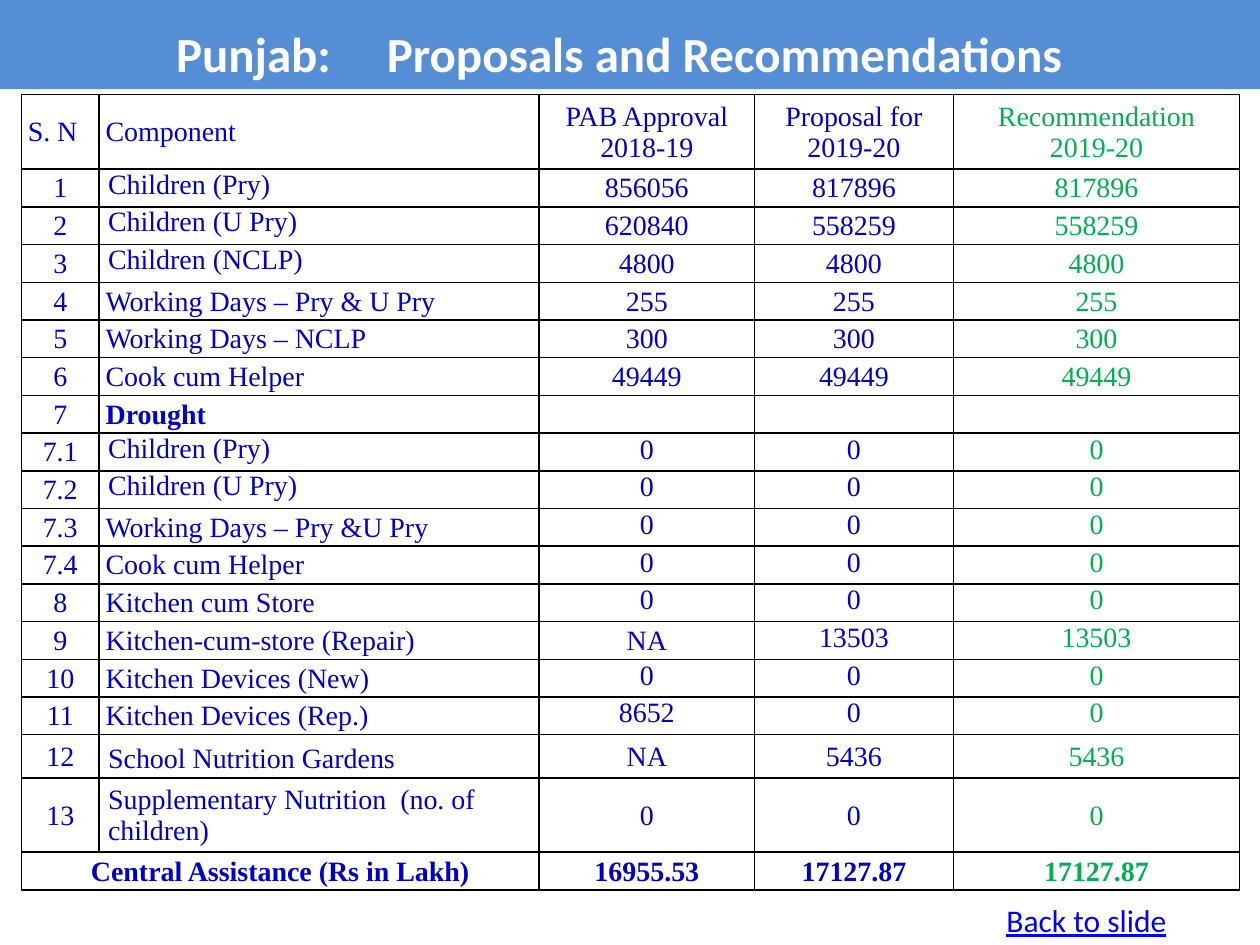
"""Build the Punjab proposals and recommendations slide."""
from dataclasses import dataclass

from lxml import etree
from pptx import Presentation
from pptx.dml.color import RGBColor
from pptx.enum.shapes import MSO_SHAPE
from pptx.enum.text import MSO_ANCHOR, PP_ALIGN
from pptx.oxml.ns import qn
from pptx.util import Cm, Pt

RECT = MSO_SHAPE.RECTANGLE
TOP, MIDDLE = MSO_ANCHOR.TOP, MSO_ANCHOR.MIDDLE
LEFT, CENTER = PP_ALIGN.LEFT, PP_ALIGN.CENTER

BLUE, GREEN, WHITE, BLACK = "0000CC", "00B050", "FFFFFF", "000000"
BANNER, LINK = "558ED5", "0000FF"
SERIF, SANS = "Times New Roman", "Calibri"
BODY_SIZE = 16
NARROW, WIDE = 0.13, 0.18
COLUMN_WIDTHS = (1.57, 8.87, 4.34, 4.01, 5.77)
ROW_HEIGHT, HEADER_HEIGHT = 0.76, 1.5


@dataclass(frozen=True)
class Style:
    align: PP_ALIGN = CENTER
    anchor: MSO_ANCHOR = MIDDLE
    inset: float = WIDE
    color: str = BLUE
    bold: bool = False
    spacing: float = 1.0
    top_inset: float = 0.02


@dataclass(frozen=True)
class Row:
    number: str
    component: str
    values: tuple[str, str, str]
    label: Style
    value_anchor: MSO_ANCHOR = MIDDLE
    height: float = ROW_HEIGHT


PLAIN = Style(LEFT, inset=NARROW)
HEADING = Style(LEFT, inset=NARROW, bold=True)
RAISED = Style(LEFT, TOP, top_inset=0)
INDENTED = Style(LEFT)
SPACED = Style(LEFT, spacing=1.15)
NUMBER = Style(inset=NARROW)
TOTAL = Style(inset=NARROW, bold=True)
ZEROS = ("0", "0", "0")

HEADERS = ("S. N", "Component", "PAB Approval 2018-19",
           "Proposal for\n2019-20", "Recommendation\n2019-20")
ROWS = (
    Row("1", "Children (Pry)", ("856056", "817896", "817896"), RAISED),
    Row("2", "Children (U Pry)", ("620840", "558259", "558259"), RAISED),
    Row("3", "Children (NCLP)", ("4800", "4800", "4800"), RAISED),
    Row("4", "Working Days – Pry & U Pry", ("255", "255", "255"), PLAIN),
    Row("5", "Working Days – NCLP", ("300", "300", "300"), PLAIN),
    Row("6", "Cook cum Helper", ("49449", "49449", "49449"), PLAIN),
    Row("7", "Drought", ("", "", ""), HEADING),
    Row("7.1", "Children (Pry)", ZEROS, RAISED, TOP),
    Row("7.2", "Children (U Pry)", ZEROS, RAISED, TOP),
    Row("7.3", "Working Days – Pry &U Pry", ZEROS, PLAIN, TOP),
    Row("7.4", "Cook cum Helper", ZEROS, PLAIN, TOP),
    Row("8", "Kitchen cum Store", ZEROS, PLAIN, TOP),
    Row("9", "Kitchen-cum-store (Repair)", ("NA", "13503", "13503"), PLAIN, TOP),
    Row("10", "Kitchen Devices (New)", ZEROS, PLAIN, TOP),
    Row("11", "Kitchen Devices (Rep.)", ("8652", "0", "0"), PLAIN, TOP),
    Row("12", "School Nutrition Gardens", ("NA", "5436", "5436"), SPACED,
        height=0.87),
    Row("13", "Supplementary Nutrition  (no. of children)", ZEROS, INDENTED,
        height=HEADER_HEIGHT),
    Row("Central Assistance (Rs in Lakh)", "",
        ("16955.53", "17127.87", "17127.87"), TOTAL),
)


def rgb(value: str) -> RGBColor:
    """Turn a hex string into a colour."""
    return RGBColor.from_string(value)


def format_runs(p, font: str, size: int, color: str, bold: bool = False) -> None:
    """Format every run of a paragraph."""
    for r in p.runs:
        r.font.name, r.font.size, r.font.bold = font, Pt(size), bold
        r.font.color.rgb = rgb(color)


def add_borders(cell) -> None:
    """Give a cell a thin black line on each side."""
    tc_pr = cell._tc.get_or_add_tcPr()
    for side in ("a:lnL", "a:lnR", "a:lnT", "a:lnB"):
        ln = etree.SubElement(tc_pr, qn(side), w=str(Pt(1)))
        fill = etree.SubElement(ln, qn("a:solidFill"))
        etree.SubElement(fill, qn("a:srgbClr"), val=BLACK)


def fill_cell(cell, text: str, style: Style) -> None:
    """Write and format one table cell."""
    add_borders(cell)
    cell.fill.solid()
    cell.fill.fore_color.rgb = rgb(WHITE)
    cell.vertical_anchor = style.anchor
    cell.margin_left = cell.margin_right = Cm(style.inset)
    cell.margin_top, cell.margin_bottom = Cm(style.top_inset), Cm(0)
    cell.text_frame.text = text
    for p in cell.text_frame.paragraphs:
        p.alignment = style.align
        if style.spacing != 1:
            p.line_spacing = style.spacing
        format_runs(p, SERIF, BODY_SIZE, style.color, style.bold)
        if not p.runs:
            p._p.get_or_add_endParaRPr().set("sz", str(BODY_SIZE * 100))


def add_banner(s) -> None:
    """Draw the title banner."""
    sp = s.shapes.add_shape(RECT, Cm(0), Cm(-0.13), Cm(25.4), Cm(1.93))
    sp.shadow.inherit = False
    sp.fill.solid()
    sp.fill.fore_color.rgb = rgb(BANNER)
    sp.line.fill.background()
    tf = sp.text_frame
    tf.word_wrap = True
    tf.vertical_anchor = MIDDLE
    tf.margin_left = Cm(3.55)
    tf.text = "Punjab:\tProposals and Recommendations"
    p = tf.paragraphs[0]
    p.alignment, p.line_spacing = LEFT, 1.4
    tabs = etree.SubElement(p._p.get_or_add_pPr(), qn("a:tabLst"))
    etree.SubElement(tabs, qn("a:tab"), pos=str(Cm(4.25)), algn="l")
    format_runs(p, SANS, 28, WHITE, True)


def add_component_table(s) -> None:
    """Draw the table of components."""
    heights = [HEADER_HEIGHT, *(row.height for row in ROWS)]
    table = s.shapes.add_table(
        len(heights), len(COLUMN_WIDTHS), Cm(0.43), Cm(1.91),
        Cm(sum(COLUMN_WIDTHS)), Cm(sum(heights))).table
    table.first_row = table.horz_banding = False
    for column, width in zip(table.columns, COLUMN_WIDTHS):
        column.width = Cm(width)
    for line, height in zip(table.rows, heights):
        line.height = Cm(height)
    last = len(COLUMN_WIDTHS) - 1
    for i, text in enumerate(HEADERS):
        fill_cell(table.cell(0, i), text,
                  Style(LEFT if i < 2 else CENTER, inset=NARROW,
                        color=GREEN if i == last else BLUE))
    for i, row in enumerate(ROWS, 1):
        is_total = row.label is TOTAL
        fill_cell(table.cell(i, 0), row.number, TOTAL if is_total else NUMBER)
        fill_cell(table.cell(i, 1), row.component, row.label)
        for j, value in enumerate(row.values, 2):
            anchor = MIDDLE if value == "NA" else row.value_anchor
            fill_cell(table.cell(i, j), value,
                      Style(anchor=anchor, bold=is_total,
                            color=GREEN if j == last else BLUE))
    table.cell(len(ROWS), 0).merge(table.cell(len(ROWS), 1))


def add_back_label(s) -> None:
    """Write the underlined label at the bottom."""
    tf = s.shapes.add_textbox(Cm(20.04), Cm(18.03), Cm(5.36), Cm(1.02)).text_frame
    tf.word_wrap = True
    tf.text = "Back to slide"
    p = tf.paragraphs[0]
    format_runs(p, SANS, 18, LINK)
    p.runs[0].font.underline = True


def main() -> None:
    """Build and save the slide."""
    prs = Presentation()
    prs.slide_width, prs.slide_height = Cm(25.4), Cm(19.05)
    s = prs.slides.add_slide(prs.slide_layouts[6])
    add_banner(s)
    add_component_table(s)
    add_back_label(s)
    prs.save("out.pptx")


if __name__ == "__main__":
    main()
